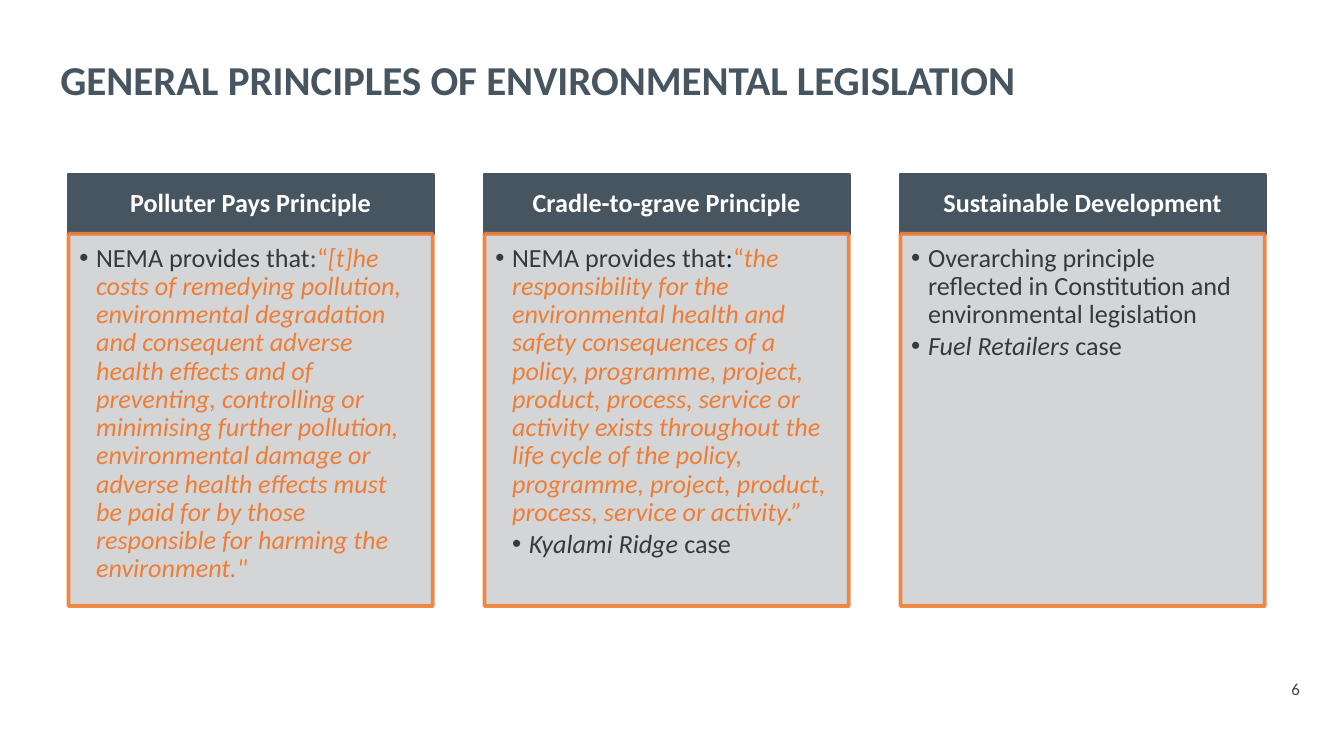
from lxml.etree import SubElement as Sub
from pptx import Presentation
from pptx.dml.color import RGBColor as RGB
from pptx.enum.shapes import MSO_SHAPE as Shape
from pptx.enum.text import MSO_ANCHOR as Anchor, PP_ALIGN as Align
from pptx.oxml.ns import qn
from pptx.util import Inches, Pt

SLATE = RGB(0x46, 0x55, 0x60)
ORANGE = RGB(0xF0, 0x7D, 0x35)
PALE = RGB(0xCF, 0xD1, 0xD2)
DARK = RGB(0x37, 0x39, 0x3B)
NAVY = RGB(0x00, 0x20, 0x60)
GREY = RGB(0x45, 0x45, 0x47)
WHITE = RGB(0xFF, 0xFF, 0xFF)

WIDE = 10
LEFT, LAST, WIDTH = 0.51, 6.7, 2.71
STEP = (LAST - LEFT) / 2
TOP, HEAD, BODY = 1.3, 0.44, 2.77
INDENT = Inches(1 / 8)

CARDS = [
    ("Polluter Pays Principle", [
        (1, [("NEMA provides that", DARK, False), (":", SLATE, False),
             ("“", ORANGE, False),
             ("[t]he costs of remedying pollution, environmental degradation "
              "and consequent adverse health effects and of preventing, "
              "controlling or minimising further pollution, environmental "
              "damage or adverse health effects must be paid for by those "
              "responsible for harming the environment.\"", ORANGE, True)]),
    ]),
    ("Cradle-to-grave Principle", [
        (1, [("NEMA provides that", DARK, False), (":", NAVY, False),
             ("“", ORANGE, False),
             ("the responsibility for the environmental health and safety "
              "consequences of a policy, programme, project, product, "
              "process, service or activity exists throughout the life cycle "
              "of the policy, programme, project, product, process, service "
              "or activity.”", ORANGE, True)]),
        (2, [("Kyalami Ridge ", DARK, True), ("case", DARK, False)]),
    ]),
    ("Sustainable Development", [
        (1, [("Overarching principle reflected in Constitution and "
              "environmental legislation", DARK, False)]),
        (1, [("Fuel Retailers ", DARK, True), ("case", DARK, False)]),
    ]),
]


def style(run, size, color, bold=False, italic=False):
    font = run.font
    font.name = "Calibri"
    font.size = Pt(size)
    font.color.rgb = color
    font.bold = bold
    font.italic = italic


def add_label(slide, text, box, size, color, bold=False, align=Align.LEFT):
    frame = slide.shapes.add_textbox(*map(Inches, box)).text_frame
    frame.word_wrap = True
    frame.vertical_anchor = Anchor.MIDDLE if bold else Anchor.TOP
    para = frame.paragraphs[0]
    para.text = text
    para.alignment = align
    style(para.runs[0], size, color, bold)


def add_box(slide, box, fill, line, pads, anchor):
    shape = slide.shapes.add_shape(Shape.RECTANGLE, *map(Inches, box))
    shape.shadow.inherit = False
    shape.fill.solid()
    shape.fill.fore_color.rgb = fill
    shape.line.color.rgb = line
    shape.line.width = Pt(2)
    frame = shape.text_frame
    frame.word_wrap = True
    frame.vertical_anchor = anchor
    (frame.margin_left, frame.margin_top,
     frame.margin_right, frame.margin_bottom) = map(Inches, pads)
    return shape


def fade(shape, share):
    for color in shape.element.spPr.iter(qn("a:srgbClr")):
        Sub(color, qn("a:alpha"), val=str(share * 1000))


def add_bullet(para, level, parts):
    para.level = level
    para.alignment = Align.LEFT
    para.line_spacing = 0.9
    para.space_after = Pt(2.1)
    props = para._p.get_or_add_pPr()
    props.set("marL", str(INDENT * level))
    props.set("indent", str(-INDENT))
    Sub(props, qn("a:buFont"), typeface="Arial")
    Sub(props, qn("a:buChar"), char="•")
    for text, color, italic in parts:
        run = para.add_run()
        run.text = text
        style(run, 14, color, italic=italic)


def add_card(slide, left, title, points):
    head = add_box(slide, (left, TOP, WIDTH, HEAD), SLATE, SLATE,
                   (0.11, 0.06, 0.11, 0.06), Anchor.MIDDLE)
    para = head.text_frame.paragraphs[0]
    para.text = title
    para.alignment = Align.CENTER
    para.line_spacing = 0.9
    style(para.runs[0], 14, WHITE, bold=True)

    body = add_box(slide, (left, TOP + HEAD, WIDTH, BODY), PALE, ORANGE,
                   (0.08, 0.08, 0.11, 0.12), Anchor.TOP)
    fade(body, 90)
    frame = body.text_frame
    for i, (level, parts) in enumerate(points):
        para = frame.add_paragraph() if i else frame.paragraphs[0]
        add_bullet(para, level, parts)


def main():
    deck = Presentation()
    deck.slide_width = Inches(WIDE)
    deck.slide_height = Inches(WIDE * 9 / 16)
    slide = deck.slides.add_slide(deck.slide_layouts[6])
    add_label(slide, "GENERAL PRINCIPLES OF ENVIRONMENTAL LEGISLATION",
              (0.35, 0.29, 8.99, 0.6), 22, SLATE, bold=True)
    for i, (title, points) in enumerate(CARDS):
        add_card(slide, LEFT + i * STEP, title, points)
    add_label(slide, "6", (9.32, 5, 0.64, 0.24), 9, GREY, align=Align.CENTER)
    deck.save("out.pptx")


if __name__ == "__main__":
    main()
